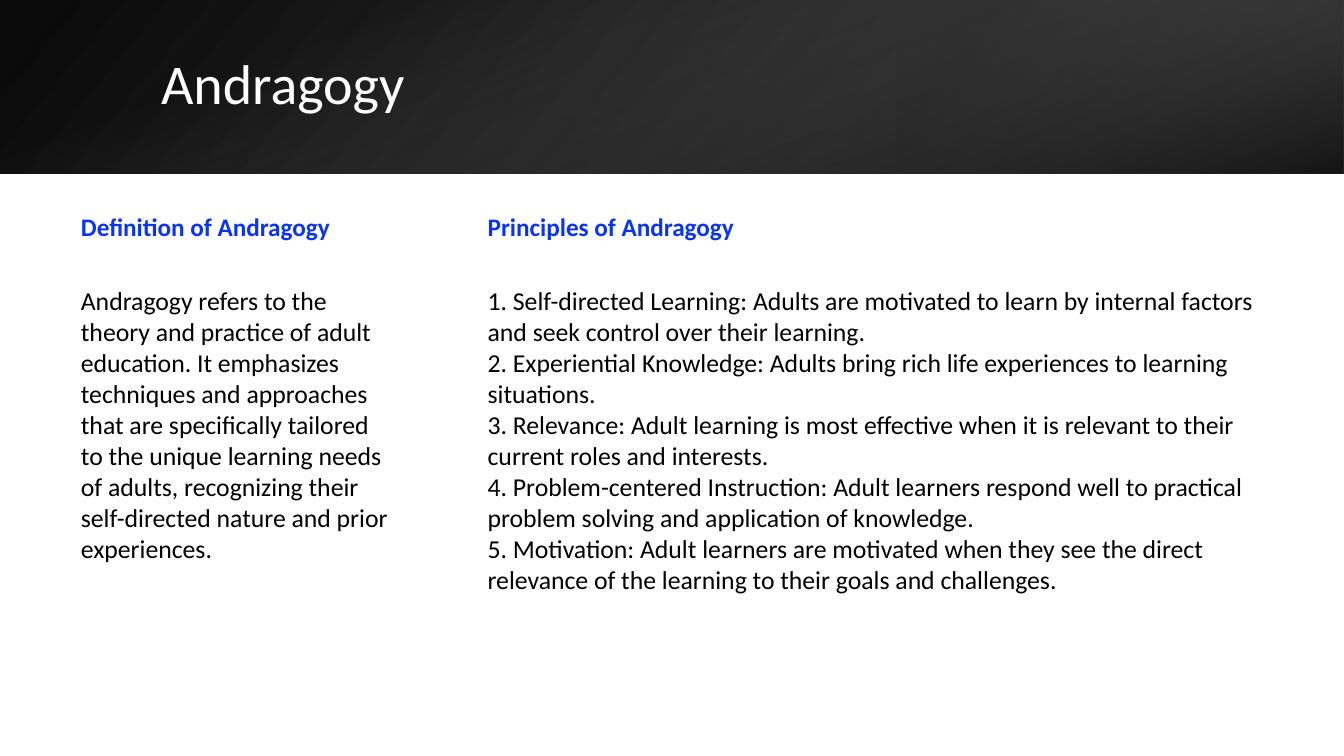
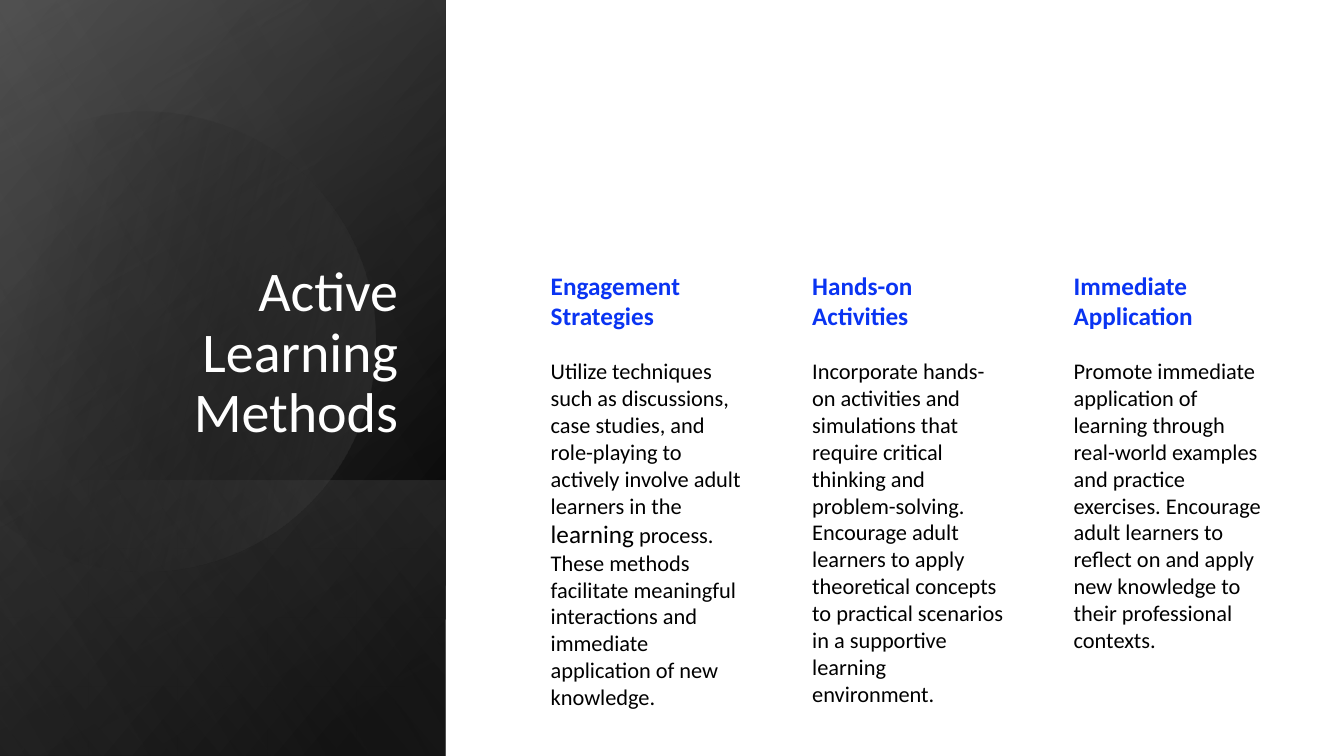
"""Build two slides on andragogy and active learning methods."""
from itertools import pairwise
from math import cos, radians, sin, tan

from pptx import Presentation
from pptx.dml.color import RGBColor
from pptx.enum.shapes import MSO_SHAPE as SHAPE
from pptx.enum.text import MSO_ANCHOR as ANCHOR, PP_ALIGN as ALIGN
from pptx.oxml import parse_xml
from pptx.oxml.ns import nsdecls, qn
from pptx.util import Cm, Pt

COLORS = {
    "black": "000000",
    "coal": "2F2F2F",
    "graphite": "464646",
    "gray": "5E5E5E",
    "silver": "9E9E9E",
    "white": "FFFFFF",
    "blue": "0A34F2",
}
FONT = "Calibri"
SLIDE_W, SLIDE_H = 33.87, 19.05
BAND_H = 4.37
SIDE_W = 11.23

PRINCIPLES = [
    "1. Self-directed Learning: Adults are motivated to learn by internal factors and seek control over their learning.",
    "2. Experiential Knowledge: Adults bring rich life experiences to learning situations.",
    "3. Relevance: Adult learning is most effective when it is relevant to their current roles and interests.",
    "4. Problem-centered Instruction: Adult learners respond well to practical problem solving and application of knowledge.",
    "5. Motivation: Adult learners are motivated when they see the direct relevance of the learning to their goals and challenges.",
]
METHODS = [
    ("Engagement Strategies", [
        ("Utilize techniques such as discussions, case studies, and role-playing to actively involve adult learners in the ", 16),
        ("learning", 18),
        (" process. These methods facilitate meaningful interactions and immediate application of new knowledge.", 16),
    ]),
    ("Hands-on Activities", [
        ("Incorporate hands-on activities and simulations that require critical thinking and problem-solving. Encourage adult learners to apply theoretical concepts to practical scenarios in a supportive learning environment.", 16),
    ]),
    ("Immediate Application", [
        ("Promote immediate application of learning through real-world examples and practice exercises. Encourage adult learners to reflect on and apply new knowledge to their professional contexts.", 16),
    ]),
]


def paint(sp, stops, angle):
    sp.shadow.inherit = False
    sp.line.fill.background()
    sp.fill.background()
    gs = "".join(
        f'<a:gs pos="{pos * 1000}"><a:srgbClr val="{COLORS[color]}">'
        f'<a:alpha val="{alpha * 1000}"/></a:srgbClr></a:gs>'
        for pos, color, alpha in stops
    )
    grad = parse_xml(
        f'<a:gradFill {nsdecls("a")} rotWithShape="1"><a:gsLst>{gs}</a:gsLst>'
        f'<a:lin ang="{angle * 60000}" scaled="0"/></a:gradFill>'
    )
    sp_pr = sp._element.spPr
    sp_pr.replace(sp_pr.find(qn("a:noFill")), grad)


def add_backdrop(slide):
    sp = slide.shapes.add_shape(SHAPE.RECTANGLE, 0, 0, Cm(SLIDE_W), Cm(SLIDE_H))
    sp.shadow.inherit = False
    sp.line.fill.background()
    sp.fill.solid()
    sp.fill.fore_color.rgb = RGBColor.from_string(COLORS["white"])


def add_panel(slide, x, y, w, h, stops, angle, rotation=0, flip=False):
    if rotation == 90:
        x, y, w, h = x + (w - h) / 2, y + (h - w) / 2, h, w
    sp = slide.shapes.add_shape(SHAPE.RECTANGLE, Cm(x), Cm(y), Cm(w), Cm(h))
    sp.rotation = rotation
    if flip:
        sp._element.spPr.find(qn("a:xfrm")).set("flipH", "1")
    paint(sp, stops, angle)


def arc_points(cx, cy, radius, angles):
    def point(angle, tangent=0.0):
        c, s = cos(angle), sin(angle)
        return Cm(cx + radius * (c - tangent * s)), Cm(cy + radius * (s + tangent * c))

    angles = [radians(a) for a in angles]
    points = [point(angles[0])]
    for a, b in pairwise(angles):
        k = 4 / 3 * tan((b - a) / 4)
        points += [point(a, k), point(b, -k), point(b)]
    return points


def curve_segments(sp):
    lines = list(sp._element.spPr.iter(qn("a:lnTo")))
    for i in range(0, len(lines), 3):
        curve = parse_xml(f'<a:cubicBezTo {nsdecls("a")}/>')
        lines[i].addprevious(curve)
        for line in lines[i:i + 3]:
            curve.append(line[0])
            line.getparent().remove(line)


def add_cut_disc(slide, cx, cy, radius, angles, stops, gradient, rotation):
    points = arc_points(cx, cy, radius, angles)
    builder = slide.shapes.build_freeform(*points[0])
    builder.add_line_segments(points[1:], close=True)
    sp = builder.convert_to_shape()
    curve_segments(sp)
    sp.rotation = rotation
    paint(sp, stops, gradient)


def add_text(slide, x, y, w, h, lines, color="black", bold=False,
             anchor=ANCHOR.TOP, align=ALIGN.LEFT, spacing=1.0, after=6):
    tf = slide.shapes.add_textbox(Cm(x), Cm(y), Cm(w), Cm(h)).text_frame
    tf.word_wrap = True
    tf.vertical_anchor = anchor
    p = tf.paragraphs[0]
    p.alignment = align
    p.line_spacing = spacing
    p.space_after = Pt(after)
    for i, runs in enumerate(lines):
        if i:
            p.add_line_break()
        for text, size in runs:
            r = p.add_run()
            r.text = text
            r.font.name = FONT
            r.font.size = Pt(size)
            r.font.bold = bold
            r.font.color.rgb = RGBColor.from_string(COLORS[color])


def add_title(slide, x, y, w, h, text, anchor, align=ALIGN.LEFT):
    add_text(slide, x, y, w, h, [[(text, 40)]], "white",
             anchor=anchor, align=align, spacing=0.9, after=0)


def add_heading(slide, x, y, w, h, text):
    add_text(slide, x, y, w, h, [[(text, 18)]], "blue", bold=True)


def build_andragogy(slide):
    add_panel(slide, 0, 0, SLIDE_W, BAND_H,
              [(0, "black", 96), (100, "graphite", 100)], 140, flip=True)
    add_panel(slide, SLIDE_W * 2 / 3, 0, SLIDE_W / 3, BAND_H,
              [(19, "coal", 68), (100, "gray", 79)], 320, 180, True)
    add_panel(slide, 0, 0, SLIDE_W, BAND_H,
              [(23, "gray", 0), (99, "black", 74)], 340, 90)
    add_title(slide, 3.81, 0.95, 27.89, 2.44, "Andragogy", ANCHOR.MIDDLE)

    definition = (
        "Andragogy refers to the theory and practice of adult education. "
        "It emphasizes techniques and approaches that are specifically tailored "
        "to the unique learning needs of adults, recognizing their self-directed "
        "nature and prior experiences."
    )
    columns = [
        (1.79, 8.28, "Definition of Andragogy", [definition]),
        (12.04, 20.12, "Principles of Andragogy", PRINCIPLES),
    ]
    for x, w, heading, lines in columns:
        add_heading(slide, x, 5.19, 8.28, 2.11, heading)
        add_text(slide, x, 7.06, w, 5.84, [[(line, 18.4)] for line in lines])


def build_methods(slide):
    side = (0, 0, SIDE_W, SLIDE_H)
    add_panel(slide, *side, [(8, "black", 100), (100, "graphite", 100)], 50, 90, True)
    add_panel(slide, *side, [(0, "black", 0), (99, "gray", 46)], 30, 90, True)
    add_panel(slide, 0, 12.1, SIDE_W, SLIDE_H - 12.1,
              [(2, "gray", 29), (100, "black", 30)], 130, 90, True)
    add_cut_disc(slide, 3.64, 8.5, 5.8, (-118, -90, 0, 90, 150),
                 [(29, "black", 0), (100, "gray", 43)], 30, 343.9)
    add_panel(slide, *side, [(0, "black", 0), (99, "silver", 11)], 120, 90, True)
    add_title(slide, 1.62, 4.68, 8.66, 6.65, "Active Learning Methods",
              ANCHOR.BOTTOM, ALIGN.RIGHT)

    for i, (heading, runs) in enumerate(METHODS):
        x = 13.63 + 6.59 * i
        add_heading(slide, x, 6.68, 5.33, 1.35, heading)
        add_text(slide, x, 8.88, 5.33, 3.76, [runs])


def main():
    prs = Presentation()
    prs.slide_width, prs.slide_height = Cm(SLIDE_W), Cm(SLIDE_H)
    for build in (build_andragogy, build_methods):
        slide = prs.slides.add_slide(prs.slide_layouts[6])
        add_backdrop(slide)
        build(slide)
    prs.save("out.pptx")


if __name__ == "__main__":
    main()
